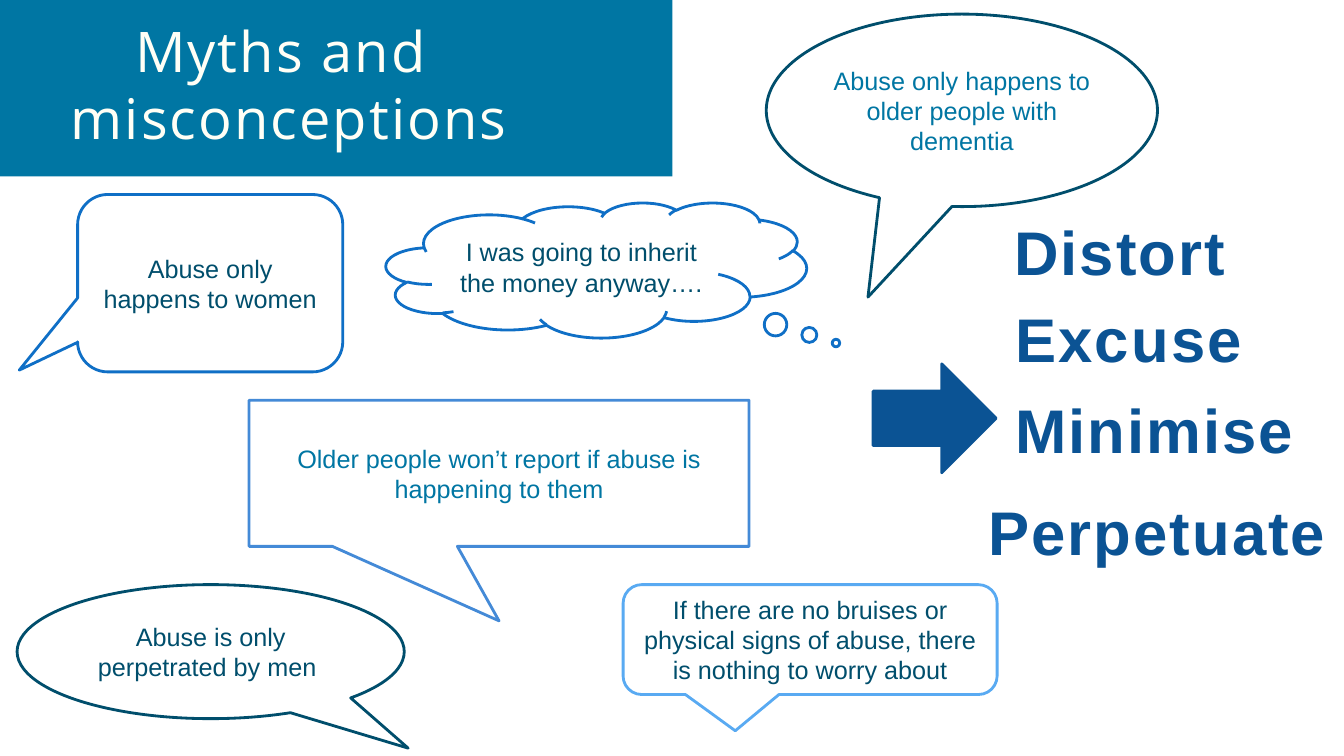
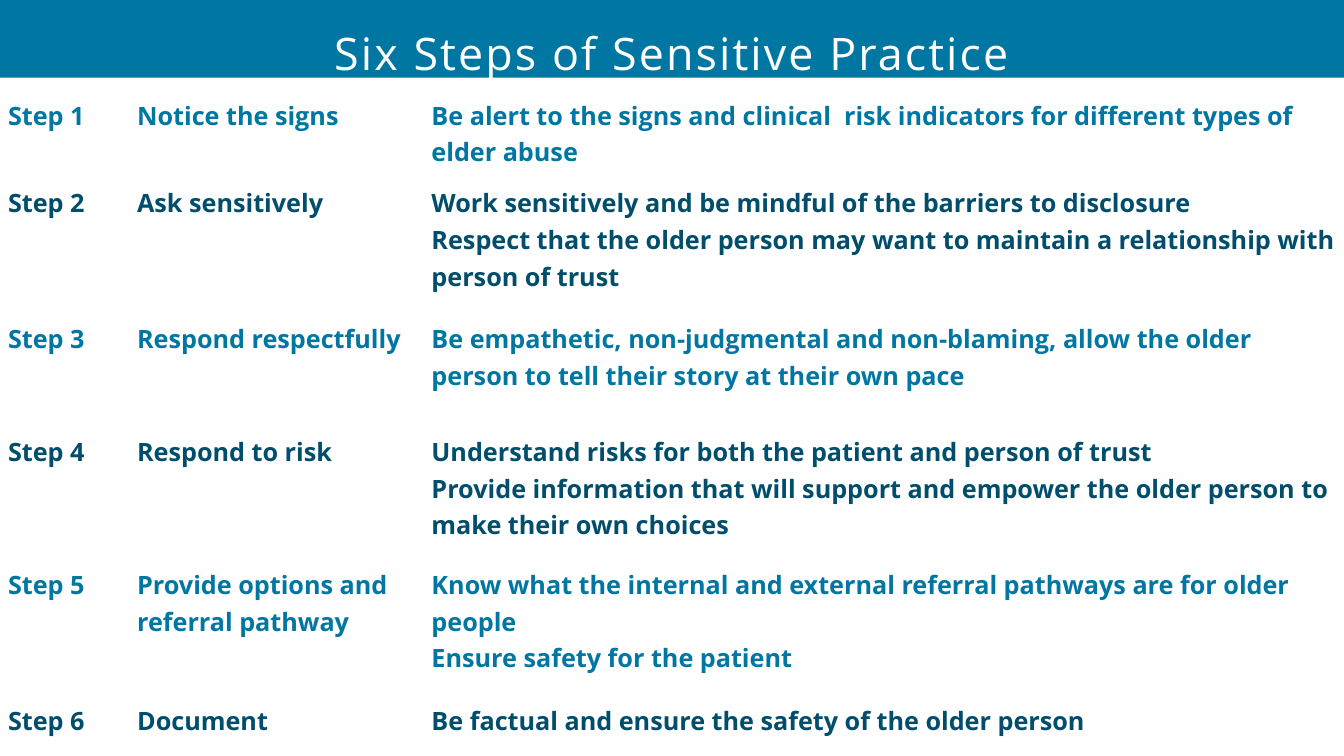
import pptx
import pptx.dml.color
import pptx.enum.shapes
import pptx.enum.text
import pptx.oxml
import pptx.oxml.ns
import pptx.util

SCALE = 9144
SHAPES = pptx.enum.shapes.MSO_SHAPE
ANCHOR = pptx.enum.text.MSO_ANCHOR
CENTER = pptx.enum.text.PP_ALIGN.CENTER
COLORS = {
    "teal": "0076A3",
    "navy": "004E6C",
    "blue": "0F6FC6",
    "mid": "448AD7",
    "sky": "59AAF2",
    "deep": "0B5394",
    "ivory": "FFFFF6",
    "white": "FFFFFF",
}
STYLES = {
    "title": {"name": "Open Sans", "size": pptx.util.Pt(40), "bold": False},
    "heading": {"name": "Open Sans", "size": pptx.util.Pt(32), "bold": False},
    "callout": {"name": "Arial", "size": pptx.util.Pt(18), "bold": False},
    "effect": {"name": "Arial", "size": pptx.util.Pt(44), "bold": True},
    "step": {"name": "Open Sans", "size": pptx.util.Pt(18), "bold": True},
}
SPACED_STYLES = ("title", "heading", "effect")
MARGINS = ("margin_left", "margin_top", "margin_right", "margin_bottom")


class Deck:
    """Hold the shared style and draw elements on the current slide."""

    def __init__(self, width, height):
        self.presentation = pptx.Presentation()
        self.presentation.slide_width = self.length(width)
        self.presentation.slide_height = self.length(height)
        self.slide = None

    def length(self, pixels):
        return pptx.util.Emu(pixels * SCALE)

    def box(self, bounds):
        return [self.length(value) for value in bounds]

    def color(self, name):
        return pptx.dml.color.RGBColor.from_string(COLORS[name])

    def add_slide(self):
        self.slide = self.presentation.slides.add_slide(self.presentation.slide_layouts[6])

    def fill_text(self, frame, lines, style, color, **paragraph_format):
        frame.word_wrap = True
        for index, line in enumerate(lines):
            paragraph = frame.add_paragraph() if index else frame.paragraphs[0]
            for name, value in paragraph_format.items():
                setattr(paragraph, name, value)
            run = paragraph.add_run()
            run.text = line
            for name, value in STYLES[style].items():
                setattr(run.font, name, value)
            run.font.color.rgb = self.color(color)
            if style in SPACED_STYLES:
                run._r.get_or_add_rPr().set("spc", "150")

    def shape(self, kind, bounds, fill, line=None):
        shape = self.slide.shapes.add_shape(kind, *self.box(bounds))
        shape.shadow.inherit = False
        shape.fill.solid()
        shape.fill.fore_color.rgb = self.color(fill)
        if line:
            shape.line.color.rgb = self.color(line)
            shape.line.width = pptx.util.Pt(2)
        else:
            shape.line.fill.background()
        return shape

    def band(self, bounds):
        self.shape(SHAPES.RECTANGLE, bounds, "teal")

    def callout(self, kind, bounds, tail, line, text, color):
        shape = self.shape(kind, bounds, "white", line)
        for index, value in enumerate(tail):
            shape.adjustments[index] = value
        shape.text_frame.vertical_anchor = ANCHOR.MIDDLE
        self.fill_text(shape.text_frame, [text], "callout", color, alignment=CENTER)

    def text(self, bounds, lines, style, color, margin=None, **paragraph_format):
        frame = self.slide.shapes.add_textbox(*self.box(bounds)).text_frame
        frame.auto_size = pptx.enum.text.MSO_AUTO_SIZE.SHAPE_TO_FIT_TEXT
        if margin is not None:
            for name in MARGINS:
                setattr(frame, name, self.length(margin))
        self.fill_text(frame, lines, style, color, alignment=CENTER, **paragraph_format)

    def cell(self, cell, lines, color):
        for name in MARGINS:
            setattr(cell, name, self.length(8))
        properties = cell._tc.get_or_add_tcPr()
        for side in ("lnL", "lnR", "lnT", "lnB"):
            properties.append(pptx.oxml.parse_xml(
                f'<a:{side} {pptx.oxml.ns.nsdecls("a")} w="{pptx.util.Pt(3)}"><a:solidFill>'
                f'<a:srgbClr val="{COLORS["white"]}"/></a:solidFill></a:{side}>'
            ))
        cell.fill.solid()
        cell.fill.fore_color.rgb = self.color("white")
        self.fill_text(cell.text_frame, lines, "step", color, line_spacing=1.07)

    def table(self, left, top, widths, heights, rows):
        bounds = (left, top, sum(widths), sum(heights))
        table = self.slide.shapes.add_table(len(rows), len(widths), *self.box(bounds)).table
        table.first_row = table.horz_banding = False
        for column, width in zip(table.columns, widths):
            column.width = self.length(width)
        for index, (height, contents) in enumerate(zip(heights, rows)):
            table.rows[index].height = self.length(height)
            color = "navy" if index % 2 else "teal"
            for column, lines in enumerate(contents):
                self.cell(table.cell(index, column), lines, color)


CALLOUTS = [
    (SHAPES.RECTANGULAR_CALLOUT, (247, 397, 496, 145), (0, 1.01), "mid",
     "Older people won’t report if abuse is happening to them", "teal"),
    (SHAPES.OVAL_CALLOUT, (17, 580, 384, 133), (0.51, 0.72), "navy",
     "Abuse is only perpetrated by men ", "navy"),
    (SHAPES.CLOUD_CALLOUT, (383, 201, 417, 134), (0.57, 0.54), "blue",
     "I was going to inherit the money anyway….", "navy"),
    (SHAPES.ROUNDED_RECTANGULAR_CALLOUT, (618, 580, 371, 109), (-0.2, 0.83, 0.17), "sky",
     "If there are no bruises or physical signs of abuse, there is nothing to worry about", "navy"),
    (SHAPES.OVAL_CALLOUT, (760, 14, 388, 191), (-0.24, 0.97), "navy",
     "Abuse only happens to older people with dementia", "teal"),
    (SHAPES.ROUNDED_RECTANGULAR_CALLOUT, (77, 193, 263, 176), (-0.72, 0.49, 0.17), "blue",
     "Abuse only happens to women", "navy"),
]
EFFECTS = [
    ("Distort", (976, 207, 269, 84)),
    ("Excuse", (976, 294, 287, 84)),
    ("Minimise", (976, 384, 338, 84)),
    ("Perpetuate", (962, 485, 371, 84)),
]
STEPS = [
    (87, "Notice the signs",
     ["Be alert to the signs and clinical  risk indicators for different types of elder abuse"]),
    (135, "Ask sensitively",
     ["Work sensitively and be mindful of the barriers to disclosure",
      "Respect that the older person may want to maintain a relationship with person of trust"]),
    (112, "Respond respectfully",
     ["Be empathetic, non-judgmental and non-blaming, allow the older person to tell their story "
      "at their own pace"]),
    (132, "Respond to risk",
     ["Understand risks for both the patient and person of trust",
      "Provide information that will support and empower the older person to make their own choices"]),
    (135, "Provide options and referral pathway",
     ["Know what the internal and external referral pathways are for older people",
      "Ensure safety for the patient"]),
    (87, "Document", ["Be factual and ensure the safety of the older person"]),
]


def build_myths(deck):
    deck.add_slide()
    for callout in CALLOUTS:
        deck.callout(*callout)
    for word, bounds in EFFECTS:
        deck.text(bounds, [word], "effect", "deep")
    deck.band((0, 0, 667, 175))
    deck.text((6, 11, 561, 145), ["Myths and ", "misconceptions"], "title", "ivory")
    deck.shape(SHAPES.RIGHT_ARROW, (866, 361, 122, 108), "deep", "deep")


def build_steps(deck):
    deck.add_slide()
    deck.band((0, -2, 1333, 79))
    deck.text((233, -4, 867, 74), ["Six Steps of Sensitive Practice"], "heading", "white",
              margin=0, line_spacing=pptx.util.Pt(60))
    heights = [height for height, _, _ in STEPS]
    rows = [([f"Step {number}"], [name], details)
            for number, (_, name, details) in enumerate(STEPS, 1)]
    deck.table(0, 87, (128, 292, 913), heights, rows)


def main():
    deck = Deck(1333, 750)
    build_myths(deck)
    build_steps(deck)
    deck.presentation.save("out.pptx")


if __name__ == "__main__":
    main()
